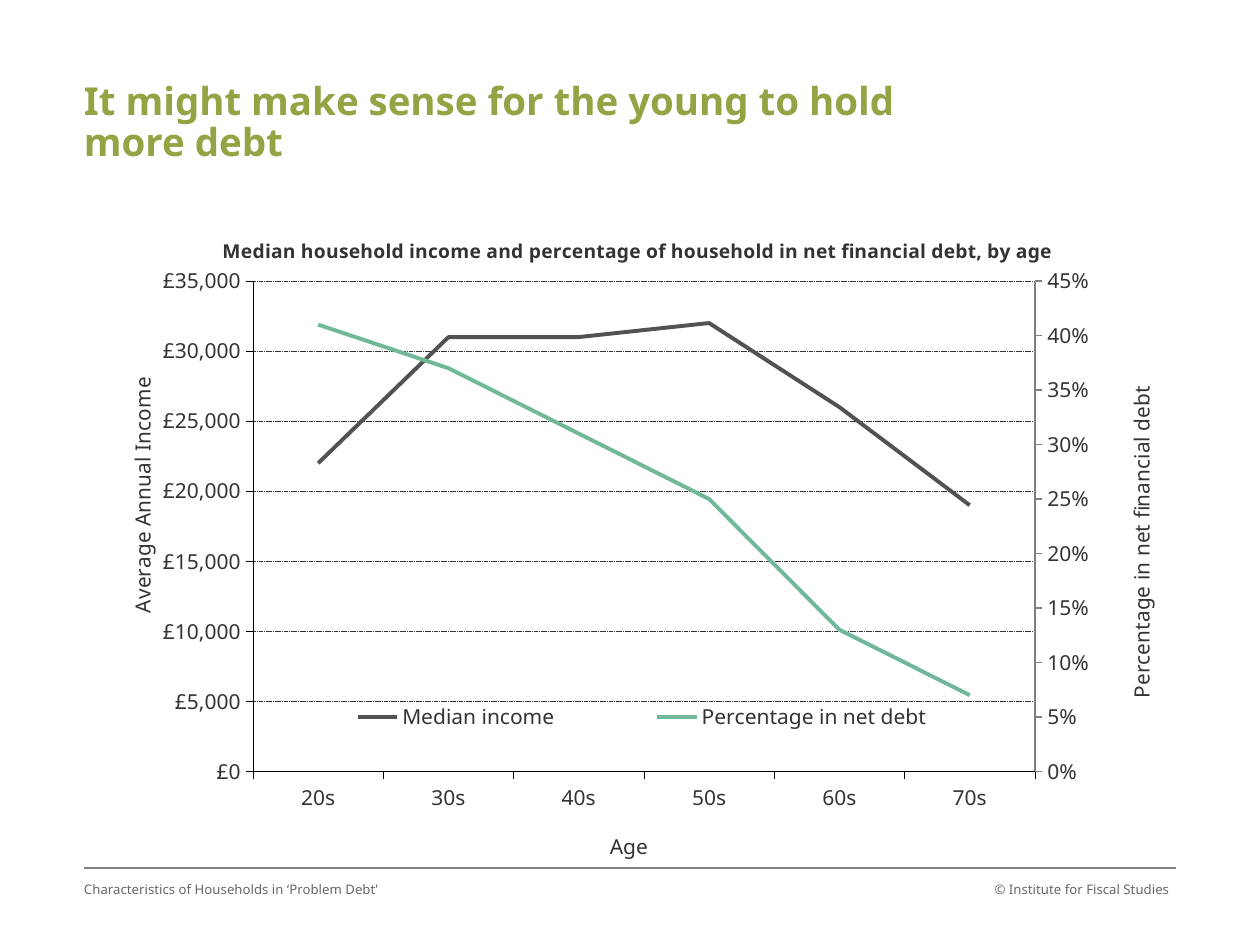
import copy

import pptx
import pptx.chart.axis
import pptx.chart.data
import pptx.dml.color
import pptx.enum.chart
import pptx.enum.dml
import pptx.enum.shapes
import pptx.enum.text
import pptx.oxml
import pptx.oxml.ns
import pptx.util

# Content
TITLE = "It might make sense for the young to hold more debt"
FOOTER = "Characteristics of Households in ‘Problem Debt’"
COPYRIGHT = "© Institute for Fiscal Studies"
CHART_TITLE = ("Median household income and percentage of household "
               "in net financial debt, by age")
AGES = ["20s", "30s", "40s", "50s", "60s", "70s"]
SERIES = [
    ("Median income", [22000, 31000, 31000, 32000, 26000, 19000], "income"),
    ("Percentage in net debt", [0.41, 0.37, 0.31, 0.25, 0.13, 0.07], "debt"),
]
COLORS = {"title": "93A445", "footer": "666666", "text": "333333",
          "rule": "808080", "axis": "000000", "income": "525252", "debt": "70B898"}
FONT = "Noto Sans"
EMU_PER_PX = 914400 // 126
CHART_BOX = (94, 204, 1082, 663)


def px(n):
    return pptx.util.Emu(n * EMU_PER_PX)


def rgb(name):
    return pptx.dml.color.RGBColor.from_string(COLORS[name])


def style_font(font, size, color="text", bold=False):
    font.name, font.size, font.bold = FONT, pptx.util.Pt(size), bold
    font.color.rgb = rgb(color)


def style_line(line, color, width):
    line.color.rgb = rgb(color)
    line.width = pptx.util.Pt(width)


def add_text(slide, text, box, size, color, bold=False, align="LEFT",
             spacing=1.0, right_inset=0):
    frame = slide.shapes.add_textbox(*map(px, box)).text_frame
    frame.word_wrap = True
    frame.margin_left = frame.margin_top = frame.margin_bottom = 0
    frame.margin_right = px(right_inset)
    paragraph = frame.paragraphs[0]
    paragraph.alignment = getattr(pptx.enum.text.PP_ALIGN, align)
    paragraph.line_spacing = spacing
    run = paragraph.add_run()
    run.text = text
    style_font(run.font, size, color, bold)


def child(element, tag):
    return element.find(pptx.oxml.ns.qn("c:" + tag))


def place(element, index, x, y, w=None, h=None, inner=False):
    """Give a chart part a manual layout, in px on the slide."""
    left, top, width, height = CHART_BOX
    parts = [("xMode", "edge"), ("yMode", "edge"),
             ("x", round((x - left) / width, 4)), ("y", round((y - top) / height, 4))]
    if inner:
        parts.insert(0, ("layoutTarget", "inner"))
    if w:
        parts += [("w", round(w / width, 4)), ("h", round(h / height, 4))]
    old = child(element, "layout")
    if old is not None:
        element.remove(old)
    body = "".join(f'<c:{tag} val="{value}"/>' for tag, value in parts)
    element.insert(index, pptx.oxml.parse_xml(
        f'<c:layout {pptx.oxml.ns.nsdecls("c")}><c:manualLayout>{body}'
        '</c:manualLayout></c:layout>'))


def set_title(owner, title, text, x, y, size=12, bold=False):
    title.text_frame.text = text
    style_font(title.text_frame.paragraphs[0].runs[0].font, size, bold=bold)
    place(title._element, 1, x, y)


def format_axis(axis, line_color, line_width):
    axis.major_tick_mark = pptx.enum.chart.XL_TICK_MARK.OUTSIDE
    axis.minor_tick_mark = pptx.enum.chart.XL_TICK_MARK.NONE
    style_font(axis.tick_labels.font, 12)
    style_line(axis.format.line, line_color, line_width)


def format_scale(axis, maximum, unit, number_format):
    axis.minimum_scale, axis.maximum_scale, axis.major_unit = 0, maximum, unit
    axis.tick_labels.number_format = number_format
    axis.tick_labels.number_format_is_linked = False


def add_right_axis(chart):
    """Move the second series to its own line plot with a right-hand axis."""
    left_plot = chart.plots[0]._element
    right_plot = copy.deepcopy(left_plot)
    ser = pptx.oxml.ns.qn("c:ser")
    left_plot.remove(left_plot.findall(ser)[1])
    right_plot.remove(right_plot.findall(ser)[0])
    left_plot.addnext(right_plot)
    cat, val = chart.category_axis._element, chart.value_axis._element
    right_cat, right_val = copy.deepcopy(cat), copy.deepcopy(val)
    val.addnext(right_val)
    right_val.addnext(right_cat)
    ids = ("50010", "50020")
    for ref, number in zip(right_plot.findall(pptx.oxml.ns.qn("c:axId")), ids):
        ref.set("val", number)
    for axis, own, other in ((right_cat, *ids), (right_val, *ids[::-1])):
        child(axis, "axId").set("val", own)
        child(axis, "crossAx").set("val", other)
    child(right_val, "axPos").set("val", "r")
    child(right_val, "crosses").set("val", "max")
    pptx.chart.axis.CategoryAxis(right_cat).visible = False
    axis = pptx.chart.axis.ValueAxis(right_val)
    axis.has_major_gridlines = False
    return axis


def add_debt_chart(slide):
    data = pptx.chart.data.CategoryChartData()
    data.categories = AGES
    for name, values, _ in SERIES:
        data.add_series(name, values)
    chart = slide.shapes.add_chart(
        pptx.enum.chart.XL_CHART_TYPE.LINE, *map(px, CHART_BOX), data).chart
    style_font(chart.font, 12)
    chart.has_title = True
    set_title(chart, chart.chart_title, CHART_TITLE, 219, 232, 11, True)

    # Axes
    age, income = chart.category_axis, chart.value_axis
    income.has_major_gridlines = True
    debt = add_right_axis(chart)
    grid = income.major_gridlines.format.line
    style_line(grid, "text", 0.25)
    grid.dash_style = pptx.enum.dml.MSO_LINE.SQUARE_DOT
    format_axis(age, "axis", 0.25)
    format_axis(income, "axis", 0.25)
    format_axis(debt, "rule", 0.75)
    format_scale(income, 35000, 5000, "\\£#,##0")
    format_scale(debt, 0.45, 0.05, "0%")
    for axis, text, x, y in ((age, "Age", 606, 833),
                             (income, "Average Annual Income", 122, 378),
                             (debt, "Percentage in net financial debt", 1121, 387)):
        set_title(axis, axis.axis_title, text, x, y)

    # Lines
    for plot, (_, _, color) in zip(chart.plots, SERIES):
        plot.vary_by_categories = False
        line = plot.series[0]
        line.smooth = False
        line.marker.style = pptx.enum.chart.XL_MARKER_STYLE.NONE
        style_line(line.format.line, color, 2.25)

    # Plot area and legend
    place(child(chart._chartSpace.chart, "plotArea"), 0, 253, 282, 782, 496, inner=True)
    chart.has_legend = True
    chart.legend.position = pptx.enum.chart.XL_LEGEND_POSITION.RIGHT
    chart.legend.include_in_layout = False
    style_font(chart.legend.font, 12)
    place(chart.legend._element, 1, 262, 705, 760, 36)


def main():
    deck = pptx.Presentation()
    deck.slide_width, deck.slide_height = px(1260), px(945)
    slide = deck.slides.add_slide(deck.slide_layouts[6])

    # Footer rule
    rule = slide.shapes.add_connector(
        pptx.enum.shapes.MSO_CONNECTOR.STRAIGHT, px(84), px(868), px(1176), px(868))
    style_line(rule.line, "rule", 0.75)
    rule._element.spPr.append(
        pptx.oxml.parse_xml(f'<a:effectLst {pptx.oxml.ns.nsdecls("a")}/>'))

    # Title and footer
    add_text(slide, TITLE, (84, 82, 903, 55), 22, "title", bold=True, spacing=0.9)
    add_text(slide, COPYRIGHT, (958, 881, 218, 50), 7.5, "footer",
             align="RIGHT", right_inset=7)
    add_text(slide, FOOTER, (84, 881, 400, 50), 7.5, "footer")

    add_debt_chart(slide)
    deck.save("out.pptx")


if __name__ == "__main__":
    main()
